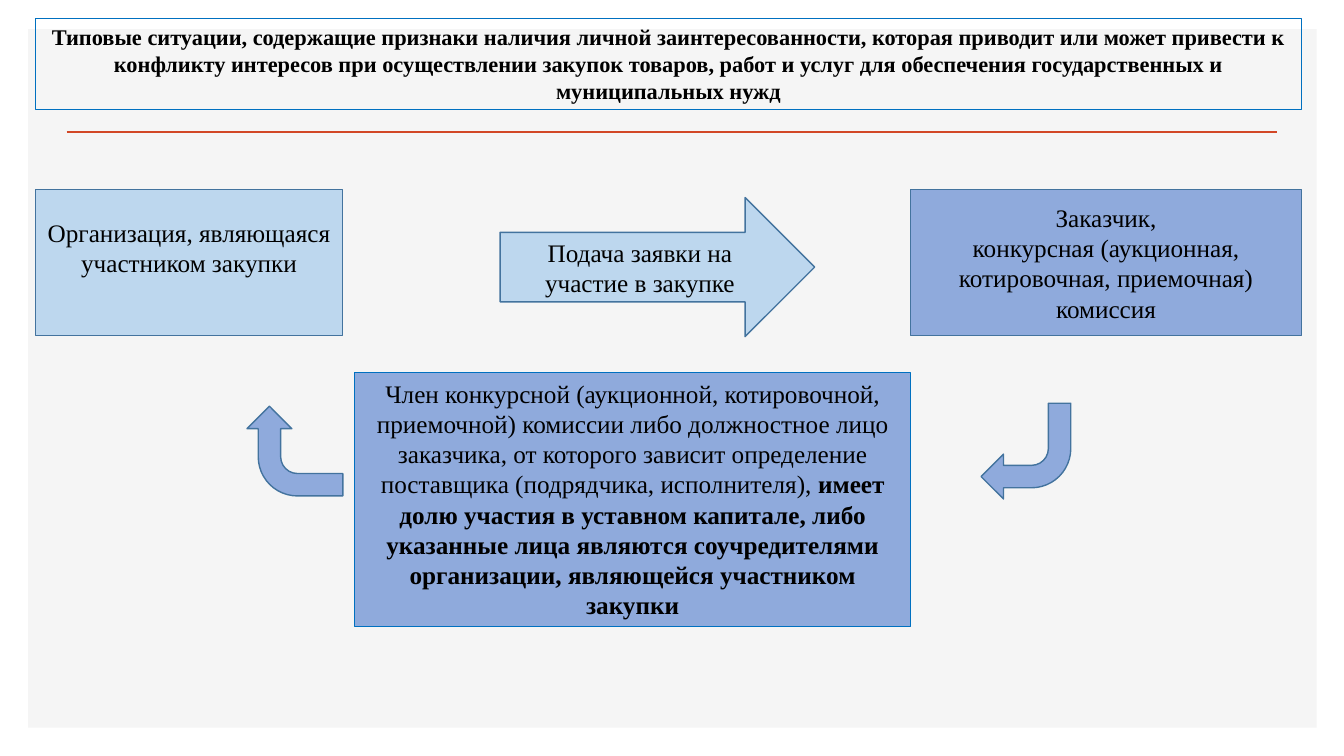
"""Build a slide on conflicts of interest in public procurement."""
from lxml import etree
from pptx import Presentation
from pptx.dml.color import RGBColor
from pptx.enum import shapes as kinds, text as layout
from pptx.oxml.ns import qn
from pptx.util import Inches, Pt

PALE, BLUE, EDGE, BRIGHT = "BDD7EE", "8FAADC", "43739E", "0070C0"
TITLE = (
    "Типовые ситуации, содержащие признаки наличия личной заинтересованности, "
    "которая приводит или может привести к конфликту интересов при осуществлении "
    "закупок товаров, работ и услуг для обеспечения государственных и муниципальных нужд"
)
MEMBER = (
    "Член конкурсной (аукционной, котировочной, приемочной) комиссии либо "
    "должностное лицо заказчика, от которого зависит определение поставщика "
    "(подрядчика, исполнителя), "
)
SHARE = (
    "имеет долю участия в уставном капитале, либо указанные лица являются "
    "соучредителями организации, являющейся участником закупки"
)


def color(value):
    """Turn a hex string into a colour."""
    return RGBColor.from_string(value)


def apply(target, values):
    """Set attributes from a dict of format values."""
    for name, value in values.items():
        setattr(target, name, value)


def set_line(line, value, width):
    """Colour a line and set its width in points."""
    line.color.rgb = color(value)
    line.width = Pt(width)


def write(shape, paragraphs, size=18, anchor=layout.MSO_ANCHOR.MIDDLE, bottom=0.05):
    """Write centred paragraphs, each a list of (wording, bold) spans."""
    frame = shape.text_frame
    apply(frame, {
        "word_wrap": True,
        "auto_size": layout.MSO_AUTO_SIZE.NONE,
        "vertical_anchor": anchor,
        "margin_left": Inches(0.1),
        "margin_right": Inches(0.1),
        "margin_top": Inches(0.05),
        "margin_bottom": Inches(bottom),
    })
    for index, spans in enumerate(paragraphs):
        para = frame.add_paragraph() if index else frame.paragraphs[0]
        para.alignment = layout.PP_ALIGN.CENTER
        for wording, bold in spans:
            span = para.add_run()
            span.text = wording
            apply(span.font, {"name": "Times New Roman", "size": Pt(size), "bold": bold})
            span.font.color.rgb = color("000000")


def add_figure(page, kind, place, fill, edge=EDGE, width=1, rotation=0):
    """Add a filled preset shape; no edge colour means no outline."""
    shape = page.shapes.add_shape(kind, *map(Inches, place))
    shape.shadow.inherit = False
    shape.rotation = rotation
    shape.fill.solid()
    shape.fill.fore_color.rgb = color(fill)
    if edge:
        set_line(shape.line, edge, width)
    else:
        shape.line.fill.background()
    return shape


def add_rule(page, left, right, top):
    """Add the horizontal rule under the heading."""
    rule = page.shapes.add_connector(
        kinds.MSO_CONNECTOR.STRAIGHT, *map(Inches, (left, top, right, top)))
    set_line(rule.line, "D24726", 2)
    etree.SubElement(rule._element.spPr, qn("a:effectLst"))


def place_title(page):
    """Move the title placeholder to the front, then frame and fill it."""
    title = page.shapes.title
    page.shapes._spTree.append(title._element)
    apply(title, {
        "left": Inches(0.35), "top": Inches(0.18),
        "width": Inches(12.56), "height": Inches(0.91),
    })
    set_line(title.line, BRIGHT, 0.75)
    write(title, [[(TITLE, True)]], 16, layout.MSO_ANCHOR.TOP)


def main():
    """Build and save the deck."""
    deck = Presentation()
    apply(deck, {"slide_width": Inches(13.33), "slide_height": Inches(7.5)})
    page = deck.slides.add_slide(deck.slide_layouts[5])
    preset = kinds.MSO_SHAPE

    add_figure(page, preset.RECTANGLE, (0.28, 0.29, 12.78, 6.93), "F5F5F5", None)
    add_rule(page, 0.66, 12.67, 1.31)

    bidder = add_figure(page, preset.RECTANGLE, (0.35, 1.88, 3.05, 1.45), PALE)
    write(bidder, [[("Организация, являющаяся участником закупки", False)]], bottom=0.35)
    customer = add_figure(page, preset.RECTANGLE, (9.03, 1.88, 3.88, 1.45), BLUE)
    write(customer, [
        [("Заказчик,", False)],
        [("конкурсная (аукционная, котировочная, приемочная) комиссия", False)],
    ])
    application = add_figure(page, preset.RIGHT_ARROW, (4.96, 1.96, 3.12, 1.38), PALE)
    write(application, [[("Подача заявки на участие в закупке", False)]])
    member = add_figure(
        page, preset.RECTANGLE, (3.52, 3.7, 5.51, 2.52), BLUE, BRIGHT, 0.75)
    write(member, [[(MEMBER, False), (SHARE, True)]], anchor=layout.MSO_ANCHOR.TOP)

    for left, rotation in ((9.73, 180), (2.48, 270)):
        add_figure(page, preset.BENT_ARROW, (left, 4, 0.89, 0.95), BLUE, rotation=rotation)
    place_title(page)
    deck.save("out.pptx")


if __name__ == "__main__":
    main()
